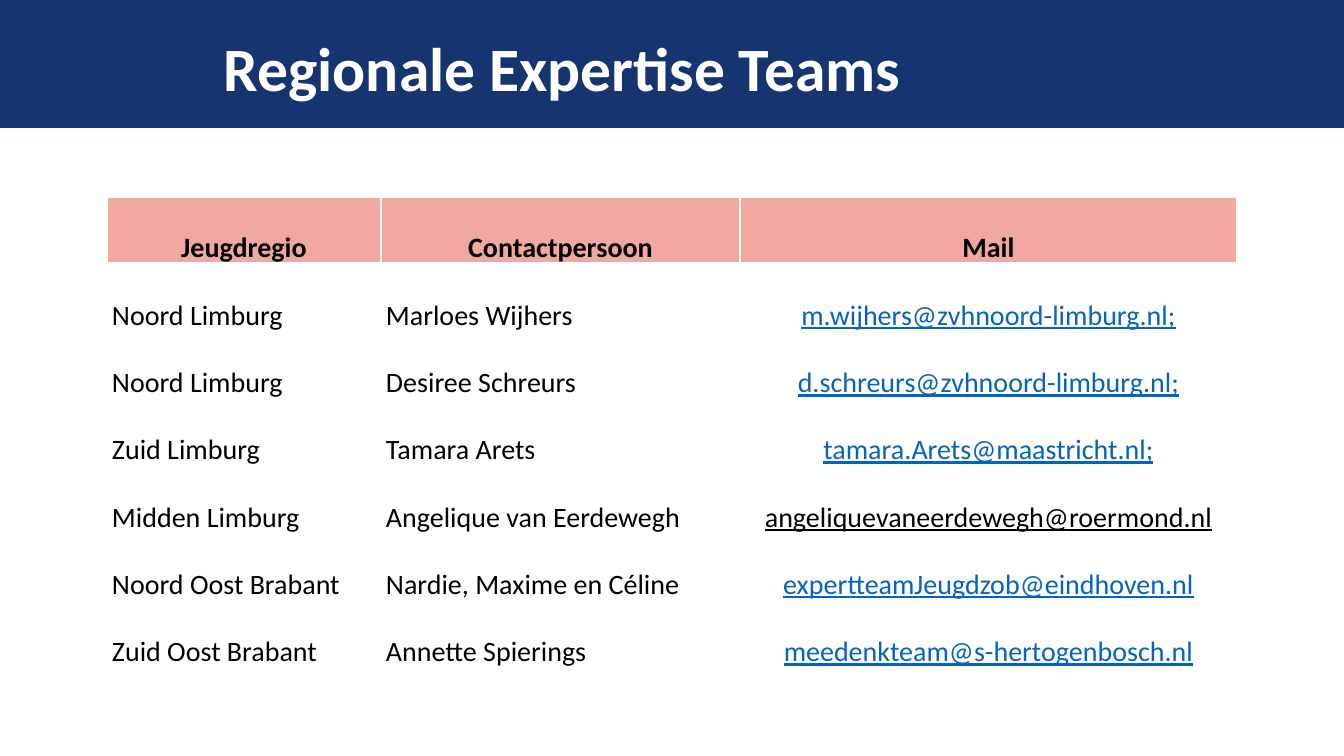
from lxml import etree
from pptx import Presentation
from pptx.dml.color import RGBColor
from pptx.enum.shapes import MSO_SHAPE
from pptx.enum.text import MSO_ANCHOR, PP_ALIGN
from pptx.oxml.ns import qn
from pptx.util import Pt

RECT = MSO_SHAPE.RECTANGLE
MIDDLE = MSO_ANCHOR.MIDDLE
LEFT, CENTER = PP_ALIGN.LEFT, PP_ALIGN.CENTER

EMU_PER_PX = 12192000 / 1344
FONT = "Calibri"
NAVY, SALMON, LINK = "163470", "F0A8A0", "0563C1"
BLACK, WHITE = "000000", "FFFFFF"

COL_WIDTHS = [274, 359, 497]
ROW_HEIGHTS = [65, 38, 38, 38, 49, 49, 45]
HEADERS = ["Jeugdregio", "Contactpersoon", "Mail"]
TEAMS = [
    ("Noord Limburg", "Marloes Wijhers", "m.wijhers@zvhnoord-limburg.nl;", LINK),
    ("Noord Limburg", "Desiree Schreurs", "d.schreurs@zvhnoord-limburg.nl;", LINK),
    ("Zuid Limburg", "Tamara Arets", "tamara.Arets@maastricht.nl;", LINK),
    ("Midden Limburg", "Angelique van Eerdewegh",
     "angeliquevaneerdewegh@roermond.nl", BLACK),
    ("Noord Oost Brabant", "Nardie, Maxime en Céline",
     "expertteamJeugdzob@eindhoven.nl", LINK),
    ("Zuid Oost Brabant", "Annette Spierings",
     "meedenkteam@s-hertogenbosch.nl", LINK),
]


def px(n):
    return round(n * EMU_PER_PX)


def color(value):
    return RGBColor.from_string(value)


def write(tf, text, size, text_color, bold=False, underline=False,
          align=LEFT, spacing=1.0):
    tf.text = text
    p = tf.paragraphs[0]
    p.alignment = align
    p.line_spacing = spacing
    font = p.runs[0].font
    font.name = FONT
    font.size = Pt(size)
    font.bold = bold
    font.underline = underline
    font.color.rgb = color(text_color)


def add_borders(cell, bottom):
    tc_pr = cell._tc.get_or_add_tcPr()
    for side, width in (("lnL", 1), ("lnR", 1), ("lnT", 1), ("lnB", bottom)):
        ln = etree.SubElement(tc_pr, qn(f"a:{side}"), w=str(Pt(width)))
        fill = etree.SubElement(ln, qn("a:solidFill"))
        etree.SubElement(fill, qn("a:srgbClr"), val=WHITE)


def style_cell(cell, header):
    cell.margin_left = cell.margin_right = px(5)
    cell.margin_top = cell.margin_bottom = 0
    add_borders(cell, 3 if header else 1)
    if header:
        cell.fill.solid()
        cell.fill.fore_color.rgb = color(SALMON)
    else:
        cell.fill.background()


def add_title_band(slide, x, y, w, h):
    sp = slide.shapes.add_shape(RECT, px(x), px(y), px(w), px(h))
    sp.shadow.inherit = False
    sp.fill.solid()
    sp.fill.fore_color.rgb = color(NAVY)
    sp.line.fill.background()
    title = slide.shapes.add_textbox(px(x + 214), px(y + 36), px(927), px(72))
    tf = title.text_frame
    tf.word_wrap = True
    tf.vertical_anchor = MIDDLE
    write(tf, "Regionale Expertise Teams", 44, WHITE, bold=True, spacing=0.9)


def add_team_table(slide, x, y):
    frame = slide.shapes.add_table(
        len(ROW_HEIGHTS), len(COL_WIDTHS), px(x), px(y),
        px(sum(COL_WIDTHS)), px(sum(ROW_HEIGHTS)))
    table = frame.table
    table.first_row = table.horz_banding = False
    for col, width in zip(table.columns, COL_WIDTHS):
        col.width = px(width)
    for row, height in zip(table.rows, ROW_HEIGHTS):
        row.height = px(height)
    for c, text in enumerate(HEADERS):
        cell = table.cell(0, c)
        style_cell(cell, header=True)
        write(cell.text_frame, text, 20, BLACK, bold=True, align=CENTER, spacing=2.0)
    for r, (*texts, mail_color) in enumerate(TEAMS, 1):
        for c, text in enumerate(texts):
            cell = table.cell(r, c)
            is_mail = c == 2
            style_cell(cell, header=False)
            write(cell.text_frame, text, 20, mail_color if is_mail else BLACK,
                  underline=is_mail, align=CENTER if is_mail else LEFT, spacing=2.0)


def main():
    prs = Presentation()
    prs.slide_width, prs.slide_height = px(1344), px(756)
    slide = prs.slides.add_slide(prs.slide_layouts[6])
    add_title_band(slide, 0, 0, 1344, 128)
    add_team_table(slide, 107, 197)
    prs.save("out.pptx")


if __name__ == "__main__":
    main()
